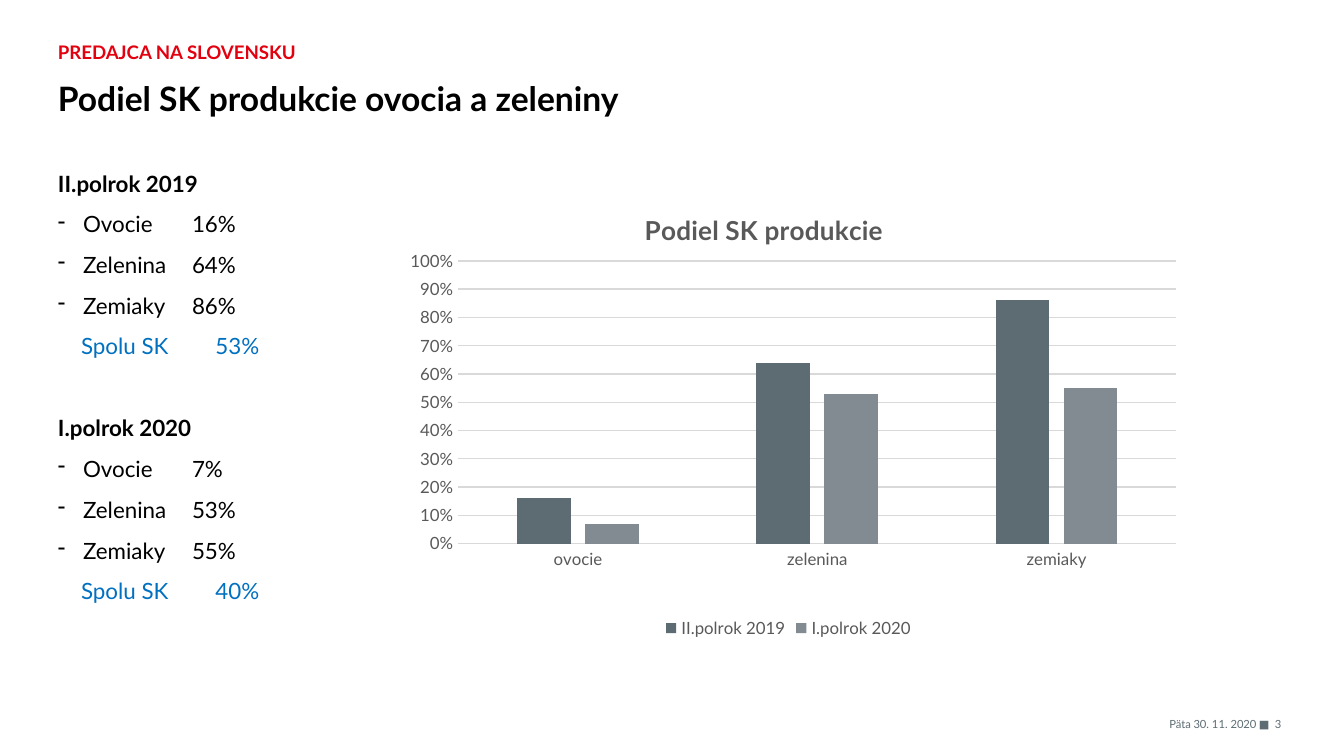
from lxml import etree
from pptx import Presentation
from pptx.chart.data import CategoryChartData
from pptx.dml.color import RGBColor
from pptx.enum.chart import XL_CHART_TYPE as ChartType, XL_LEGEND_POSITION as LegendPosition
from pptx.enum.chart import XL_TICK_MARK as TickMark
from pptx.enum.text import MSO_ANCHOR as Anchor, PP_ALIGN as Align
from pptx.oxml.ns import qn
from pptx.util import Pt

PX = 6804  # EMU per px
FONT = "Lato"
BLACK = RGBColor(0x00, 0x00, 0x00)
RED = RGBColor(0xE3, 0x00, 0x0F)
BLUE = RGBColor(0x00, 0x70, 0xC0)
SLATE = RGBColor(0x5D, 0x6C, 0x73)
GREY = RGBColor(0x82, 0x8B, 0x92)
TEXT_GREY = RGBColor(0x59, 0x59, 0x59)
LINE_GREY = RGBColor(0xD9, 0xD9, 0xD9)

KICKER = "PREDAJCA NA SLOVENSKU"
TITLE = "Podiel SK produkcie ovocia a zeleniny"
CHART_TITLE = "Podiel SK produkcie"
CROPS = ["Ovocie", "Zelenina", "Zemiaky"]
TOTAL = "Spolu SK"
PERIODS = [  # name, percent per crop, total percent, bar colour
    ("II.polrok 2019", [16, 64, 86], 53, SLATE),
    ("I.polrok 2020", [7, 53, 55], 40, GREY),
]
FOOTER = [  # text, left, width, alignment
    ("Päta", 851, 340, Align.RIGHT),
    ("30. 11. 2020", 1191, 68, Align.CENTER),
    ("■\t3", 1259, 85, Align.LEFT),
]
VALUE_TAB, TOTAL_INDENT, BULLET_INDENT, FOOTER_TAB = 134, 23, 25, 16


def style_font(font, size, color, bold=False):
    font.name, font.size, font.bold = FONT, Pt(size), bold
    font.color.rgb = color


def add_text_frame(slide, left, top, width, height, anchor=Anchor.TOP):
    frame = slide.shapes.add_textbox(left * PX, top * PX, width * PX, height * PX).text_frame
    frame.word_wrap, frame.vertical_anchor = True, anchor
    frame.margin_left = frame.margin_top = frame.margin_right = frame.margin_bottom = 0
    return frame


def add_tab(paragraph, position):
    tabs = etree.SubElement(paragraph._p.get_or_add_pPr(), qn("a:tabLst"))
    etree.SubElement(tabs, qn("a:tab"), pos=str(position * PX), algn="l")


def add_line(frame, text, color=BLACK, bold=False, before=3, indent=0, bullet=False, tab=True):
    first = not frame.text
    paragraph = frame.paragraphs[0] if first else frame.add_paragraph()
    paragraph.text = text
    paragraph.line_spacing = 1.1
    paragraph.space_before, paragraph.space_after = Pt(0 if first else before), Pt(3)
    properties = paragraph._p.get_or_add_pPr()
    properties.set("marL", str(indent * PX))
    properties.set("indent", str(-indent * PX if bullet else 0))
    if bullet:
        etree.SubElement(properties, qn("a:buChar"), char="-")
    if tab:
        add_tab(paragraph, VALUE_TAB)
    style_font(paragraph.font, 12, color, bold)


def set_layout(parent, index, **values):
    """Give a chart part a manual layout, placed as child number index."""
    for old in parent.findall(qn("c:layout")):
        parent.remove(old)
    layout = etree.Element(qn("c:layout"))
    manual = etree.SubElement(layout, qn("c:manualLayout"))
    for name, value in values.items():
        etree.SubElement(manual, qn("c:" + name), val=str(value))
    parent.insert(index, layout)


def add_share_chart(slide):
    data = CategoryChartData(number_format="0%")
    data.categories = [crop.lower() for crop in CROPS]
    for name, shares, _, _ in PERIODS:
        data.add_series(name, [share / 100 for share in shares])
    chart = slide.shapes.add_chart(
        ChartType.COLUMN_CLUSTERED, 376 * PX, 188 * PX, 825 * PX, 456 * PX, data).chart
    style_font(chart.font, 9, TEXT_GREY)

    title = chart.chart_title
    title.text_frame.text = CHART_TITLE
    style_font(title.text_frame.paragraphs[0].font, 14, TEXT_GREY, True)
    set_layout(title._element, 1, xMode="edge", yMode="edge", x=0.32, y=0.04)
    set_layout(chart._chartSpace.chart.plotArea, 0, layoutTarget="inner", xMode="edge",
               yMode="edge", x=0.1, y=0.16, w=0.87, h=0.62)

    chart.has_legend = True
    chart.legend.position = LegendPosition.BOTTOM
    chart.legend.include_in_layout = False
    style_font(chart.legend.font, 9, TEXT_GREY)

    plot = chart.plots[0]
    plot.gap_width, plot.overlap, plot.vary_by_categories = 219, -27, False
    for series, (_, _, _, color) in zip(plot.series, PERIODS):
        series.format.fill.solid()
        series.format.fill.fore_color.rgb = color

    values, categories = chart.value_axis, chart.category_axis
    for axis in (values, categories):
        axis.major_tick_mark = axis.minor_tick_mark = TickMark.NONE
        style_font(axis.tick_labels.font, 9, TEXT_GREY)
    values.minimum_scale, values.maximum_scale, values.major_unit = 0, 1, 0.1
    values.tick_labels.number_format = "0%"
    values.tick_labels.number_format_is_linked = False
    values.format.line.fill.background()
    for line in (values.major_gridlines.format.line, categories.format.line):
        line.color.rgb, line.width = LINE_GREY, Pt(0.75)


presentation = Presentation()
presentation.slide_width, presentation.slide_height = 1344 * PX, 756 * PX
slide = presentation.slides.add_slide(presentation.slide_layouts[6])

kicker = add_text_frame(slide, 58, 39, 1227, 24, Anchor.BOTTOM).paragraphs[0]
kicker.text = KICKER
style_font(kicker.font, 10, RED, True)

title = add_text_frame(slide, 58, 82, 1227, 71).paragraphs[0]
title.text = TITLE
title.line_spacing = 0.9
style_font(title.font, 18, BLACK, True)

shares_frame = add_text_frame(slide, 58, 167, 310, 508)
for name, shares, total, _ in PERIODS:
    add_line(shares_frame, name, bold=True, before=25, tab=False)
    for crop, share in zip(CROPS, shares):
        add_line(shares_frame, f"{crop}\t{share}%", indent=BULLET_INDENT, bullet=True)
    add_line(shares_frame, f"{TOTAL}\t{total}%", BLUE, indent=TOTAL_INDENT)

add_share_chart(slide)

for text, left, width, alignment in FOOTER:
    paragraph = add_text_frame(slide, left, 711, width, 20, Anchor.BOTTOM).paragraphs[0]
    paragraph.text = text
    paragraph.alignment = alignment
    if "\t" in text:
        add_tab(paragraph, FOOTER_TAB)
    style_font(paragraph.font, 6, SLATE)

presentation.save("out.pptx")
